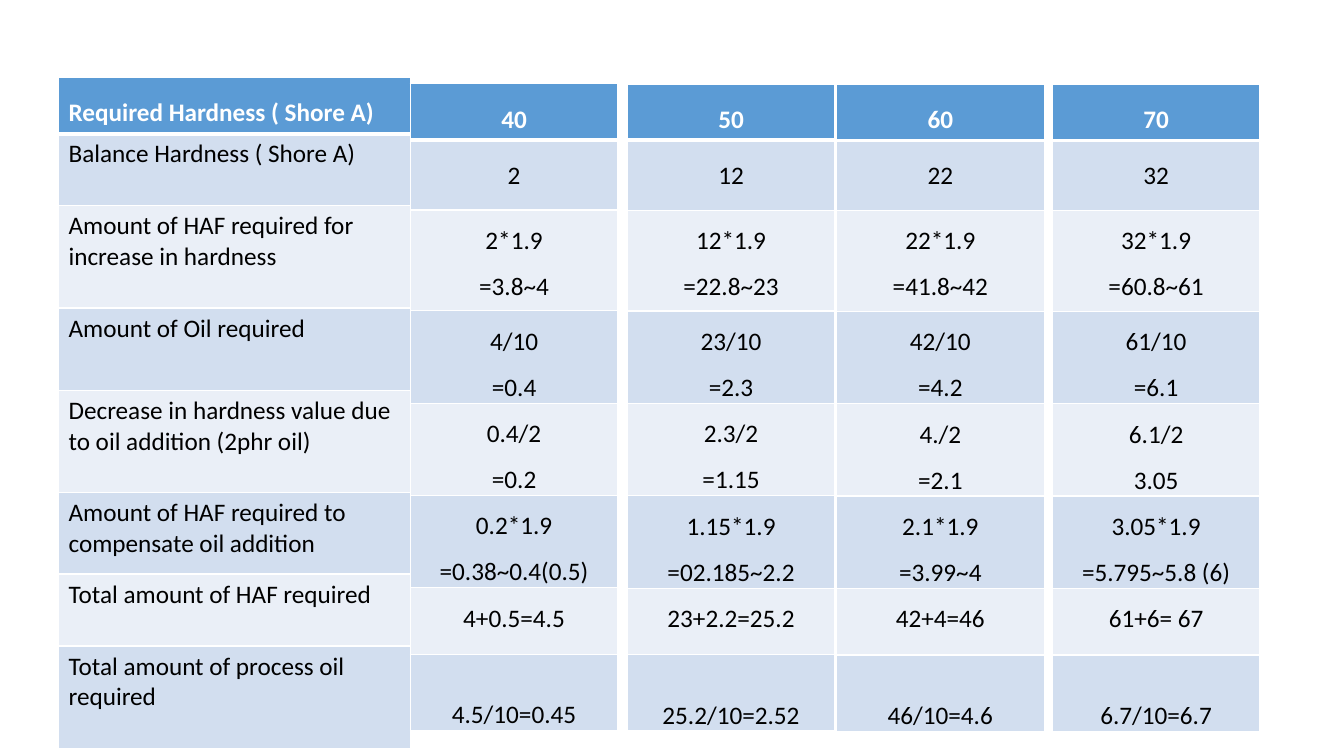
from dataclasses import dataclass

from lxml import etree
from pptx import Presentation
from pptx.dml.color import RGBColor
from pptx.enum.text import MSO_ANCHOR, PP_ALIGN
from pptx.oxml.ns import qn
from pptx.util import Pt

LEFT, CENTER, JUSTIFY = PP_ALIGN.LEFT, PP_ALIGN.CENTER, PP_ALIGN.JUSTIFY
TOP, BOTTOM = MSO_ANCHOR.TOP, MSO_ANCHOR.BOTTOM


@dataclass(frozen=True)
class Theme:
    font: str = "Calibri"
    size: float = 18
    header: str = "5B9BD5"
    bands: tuple = ("D2DEEF", "EAEFF7")
    border: str = "FFFFFF"
    header_text: str = "FFFFFF"
    body_text: str = "000000"
    thin: float = 1
    thick: float = 3
    spacing: float = 1.5
    tight_inset: float = 4.5


class HardnessPage:
    def __init__(self, page, theme):
        self.page = page
        self.theme = theme

    def add_column(self, left, top, width, heights, texts, is_label=False):
        frame = self.page.shapes.add_table(
            len(texts), 1, Pt(left), Pt(top), Pt(width), Pt(sum(heights))
        )
        table = frame.table
        table.first_row = table.horz_banding = False
        table.columns[0].width = Pt(width)
        for row, (height, text) in enumerate(zip(heights, texts)):
            table.rows[row].height = Pt(height)
            cell = table.cell(row, 0)
            self.style_cell(cell, row)
            if is_label:
                self.fill_text(cell, text, row, JUSTIFY if row == 0 else LEFT,
                               self.theme.spacing if row == 0 else 1)
            else:
                if row > 1:
                    self.tighten(cell)
                self.fill_text(cell, text, row, CENTER, self.theme.spacing)
                cell.vertical_anchor = BOTTOM if row == len(texts) - 1 else TOP

    def style_cell(self, cell, row):
        thin, thick = self.theme.thin, self.theme.thick
        self.add_border(cell, "L", thin)
        self.add_border(cell, "R", thin)
        self.add_border(cell, "T", thick if row == 1 else thin)
        self.add_border(cell, "B", thick if row == 0 else thin)
        color = self.theme.bands[(row - 1) % 2] if row else self.theme.header
        cell.fill.solid()
        cell.fill.fore_color.rgb = RGBColor.from_string(color)

    def add_border(self, cell, side, width):
        properties = cell._tc.get_or_add_tcPr()
        line = etree.SubElement(properties, qn(f"a:ln{side}"), w=str(Pt(width)))
        fill = etree.SubElement(line, qn("a:solidFill"))
        etree.SubElement(fill, qn("a:srgbClr"), val=self.theme.border)

    def tighten(self, cell):
        cell.margin_left = cell.margin_right = Pt(self.theme.tight_inset)
        cell.margin_top = cell.margin_bottom = Pt(0)

    def fill_text(self, cell, text, row, alignment, spacing):
        theme = self.theme
        cell.text = text
        for paragraph in cell.text_frame.paragraphs:
            paragraph.alignment = alignment
            paragraph.line_spacing = spacing
            font = paragraph.font
            font.name = theme.font
            font.size = Pt(theme.size)
            font.bold = row == 0
            color = theme.body_text if row else theme.header_text
            font.color.rgb = RGBColor.from_string(color)


LABELS = (
    "Required Hardness ( Shore A)",
    "Balance Hardness ( Shore A)",
    "Amount of HAF required for increase in hardness",
    "Amount of Oil required",
    "Decrease in hardness value due to oil addition (2phr oil)",
    "Amount of HAF required to compensate oil addition",
    "Total amount of HAF required",
    "Total amount of process oil required",
)
LABEL_HEIGHTS = (39, 51.5, 73, 59, 73, 58, 51.5, 73)
VALUE_HEIGHTS = (39, 50, 72, 66, 66, 66, 47.5, 54.5)
VALUE_WIDTH = 148.4
VALUE_COLUMNS = (
    (293, 59.8, ("40", "2", "2*1.9\n=3.8~4", "4/10\n=0.4", "0.4/2\n=0.2",
                 "0.2*1.9\n=0.38~0.4(0.5)", "4+0.5=4.5", "4.5/10=0.45")),
    (448, 60, ("50", "12", "12*1.9\n=22.8~23", "23/10\n=2.3", "2.3/2\n=1.15",
               "1.15*1.9\n=02.185~2.2", "23+2.2=25.2", "25.2/10=2.52")),
    (597.5, 60.2, ("60", "22", "22*1.9\n=41.8~42", "42/10\n=4.2", "4./2\n=2.1",
                   "2.1*1.9\n=3.99~4", "42+4=46", "46/10=4.6")),
    (751.6, 60.2, ("70", "32", "32*1.9\n=60.8~61", "61/10\n=6.1", "6.1/2\n3.05",
                   "3.05*1.9\n=5.795~5.8 (6)", "61+6= 67", "6.7/10=6.7")),
)


def main():
    deck = Presentation()
    deck.slide_width, deck.slide_height = Pt(960), Pt(540)
    page = HardnessPage(deck.slides.add_slide(deck.slide_layouts[6]), Theme())
    page.add_column(41.8, 55.4, 251.2, LABEL_HEIGHTS, LABELS, is_label=True)
    for left, top, texts in VALUE_COLUMNS:
        page.add_column(left, top, VALUE_WIDTH, VALUE_HEIGHTS, texts)
    deck.save("out.pptx")


if __name__ == "__main__":
    main()
